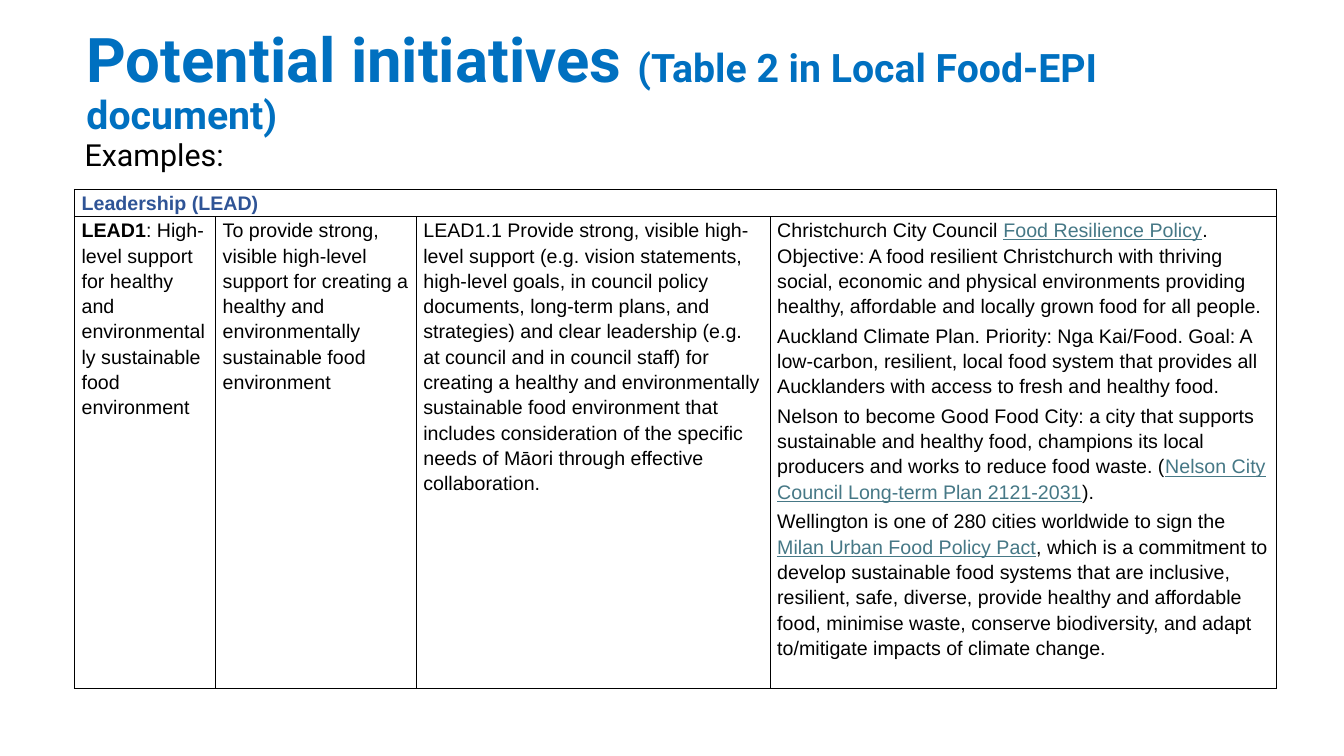
from dataclasses import dataclass

from lxml.etree import SubElement
from pptx import Presentation
from pptx.dml.color import RGBColor
from pptx.enum.text import MSO_ANCHOR
from pptx.oxml.ns import qn
from pptx.util import Emu, Inches, Pt

BLACK, TITLE_BLUE, HEADING_BLUE, LINK_TEAL = "000000", "0070C0", "2F5496", "467886"


@dataclass(frozen=True)
class Span:
    text: str
    color: str = BLACK
    bold: bool = False
    underline: bool = False
    size: float | None = None


@dataclass(frozen=True)
class Style:
    font: str
    size: float
    line_spacing: float
    before: float = 0
    after: float = 0


@dataclass(frozen=True)
class Area:
    """Left, top, width and height in percent of the slide."""
    left: float
    top: float
    width: float
    height: float


TITLE_STYLE = Style("Roboto", 44, 0.9)
EXAMPLES_STYLE = Style("Roboto", 21.7, 0.7, before=10)
HEADING_STYLE = Style("Arial", 14, 1.15, after=8)
BODY_STYLE = Style("Arial", 14, 1.15, after=3)

TITLE_AREA = Area(5.7, 4.8, 87.4, 12.53)
EXAMPLES_AREA = Area(5.55, 18.67, 86.27, 5.2)
COLUMN_WIDTHS = (10.5, 14.93, 26.33, 37.66)
ROW_HEIGHTS = (3.33, 58.67)
TABLE_AREA = Area(5.55, 25.07, sum(COLUMN_WIDTHS), sum(ROW_HEIGHTS))


def link(text: str) -> Span:
    return Span(text, LINK_TEAL, underline=True)


TITLE = [[
    Span("Potential initiatives ", TITLE_BLUE, bold=True),
    Span("(Table 2 in Local Food-EPI document)", TITLE_BLUE, bold=True, size=28),
]]
HEADING = [[Span("Leadership (LEAD)", HEADING_BLUE, bold=True)]]
INDICATOR = [[
    Span("LEAD1", bold=True),
    Span(": High-level support for healthy and environmentally sustainable food "
         "environment"),
]]
PURPOSE = [[Span(
    "To provide strong, visible high-level support for creating a healthy and "
    "environmentally sustainable food environment")]]
INITIATIVE = [[Span(
    "LEAD1.1 Provide strong, visible high-level support (e.g. vision statements, "
    "high-level goals, in council policy documents, long-term plans, and strategies) "
    "and clear leadership (e.g. at council and in council staff) for creating a "
    "healthy and environmentally sustainable food environment that includes "
    "consideration of the specific needs of Māori through effective collaboration.")]]
COUNCIL_EXAMPLES = [
    [Span("Christchurch City Council "), link("Food Resilience Policy"),
     Span(". Objective: A food resilient Christchurch with thriving social, economic "
          "and physical environments providing healthy, affordable and locally grown "
          "food for all people.")],
    [Span("Auckland Climate Plan. Priority: Nga Kai/Food. Goal: A low-carbon, "
          "resilient, local food system that provides all Aucklanders with access to "
          "fresh and healthy food.")],
    [Span("Nelson to become Good Food City: a city that supports sustainable and "
          "healthy food, champions its local producers and works to reduce food "
          "waste. ("),
     link("Nelson City Council Long-term Plan 2121-2031"), Span(").")],
    [Span("Wellington is one of 280 cities worldwide to sign the "),
     link("Milan Urban Food Policy Pact"),
     Span(", which is a commitment to develop sustainable food systems that are "
          "inclusive, resilient, safe, diverse, provide healthy and affordable food, "
          "minimise waste, conserve biodiversity, and adapt to/mitigate impacts of "
          "climate change.")],
]

deck = Presentation()
deck.slide_width, deck.slide_height = Inches(13.33), Inches(7.5)
slide = deck.slides.add_slide(deck.slide_layouts[6])


def across(percent: float) -> Emu:
    return Emu(round(deck.slide_width * percent / 100))


def down(percent: float) -> Emu:
    return Emu(round(deck.slide_height * percent / 100))


def place(area: Area) -> tuple[Emu, Emu, Emu, Emu]:
    return across(area.left), down(area.top), across(area.width), down(area.height)


def rgb(color: str) -> RGBColor:
    return RGBColor.from_string(color)


def write(frame, paragraphs: list[list[Span]], style: Style) -> None:
    for index, spans in enumerate(paragraphs):
        paragraph = frame.paragraphs[0] if index == 0 else frame.add_paragraph()
        paragraph.font.name = style.font
        paragraph.font.size = Pt(style.size)
        paragraph.line_spacing = style.line_spacing
        paragraph.space_before = Pt(style.before)
        paragraph.space_after = Pt(style.after)
        for span in spans:
            run = paragraph.add_run()
            run.text = span.text
            run.font.color.rgb = rgb(span.color)
            run.font.bold = span.bold
            run.font.underline = span.underline
            if span.size:
                run.font.size = Pt(span.size)


def add_text(area: Area, paragraphs: list[list[Span]], style: Style,
             anchor: MSO_ANCHOR) -> None:
    frame = slide.shapes.add_textbox(*place(area)).text_frame
    frame.word_wrap = True
    frame.vertical_anchor = anchor
    write(frame, paragraphs, style)


def format_cell(cell) -> None:
    """Clear the fill, tighten the margins and draw thin black borders."""
    cell.margin_left = cell.margin_right = Inches(0.07)
    cell.margin_top = cell.margin_bottom = 0
    properties = cell._tc.get_or_add_tcPr()
    for side in ("a:lnL", "a:lnR", "a:lnT", "a:lnB"):
        border = SubElement(properties, qn(side), w=str(Pt(1)))
        SubElement(SubElement(border, qn("a:solidFill")), qn("a:srgbClr"), val=BLACK)
    cell.fill.background()


def add_initiatives_table() -> None:
    table = slide.shapes.add_table(
        len(ROW_HEIGHTS), len(COLUMN_WIDTHS), *place(TABLE_AREA)).table
    table.first_row = table.horz_banding = False
    for column, width in zip(table.columns, COLUMN_WIDTHS):
        column.width = across(width)
    for row, height in zip(table.rows, ROW_HEIGHTS):
        row.height = down(height)
    for cell in table.iter_cells():
        format_cell(cell)
    heading = table.cell(0, 0)
    heading.merge(table.cell(0, len(COLUMN_WIDTHS) - 1))
    write(heading.text_frame, HEADING, HEADING_STYLE)
    details = (INDICATOR, PURPOSE, INITIATIVE, COUNCIL_EXAMPLES)
    for cell, paragraphs in zip(table.rows[1].cells, details):
        write(cell.text_frame, paragraphs, BODY_STYLE)


add_text(TITLE_AREA, TITLE, TITLE_STYLE, MSO_ANCHOR.MIDDLE)
add_initiatives_table()
add_text(EXAMPLES_AREA, [[Span("Examples:")]], EXAMPLES_STYLE, MSO_ANCHOR.TOP)
deck.save("out.pptx")
